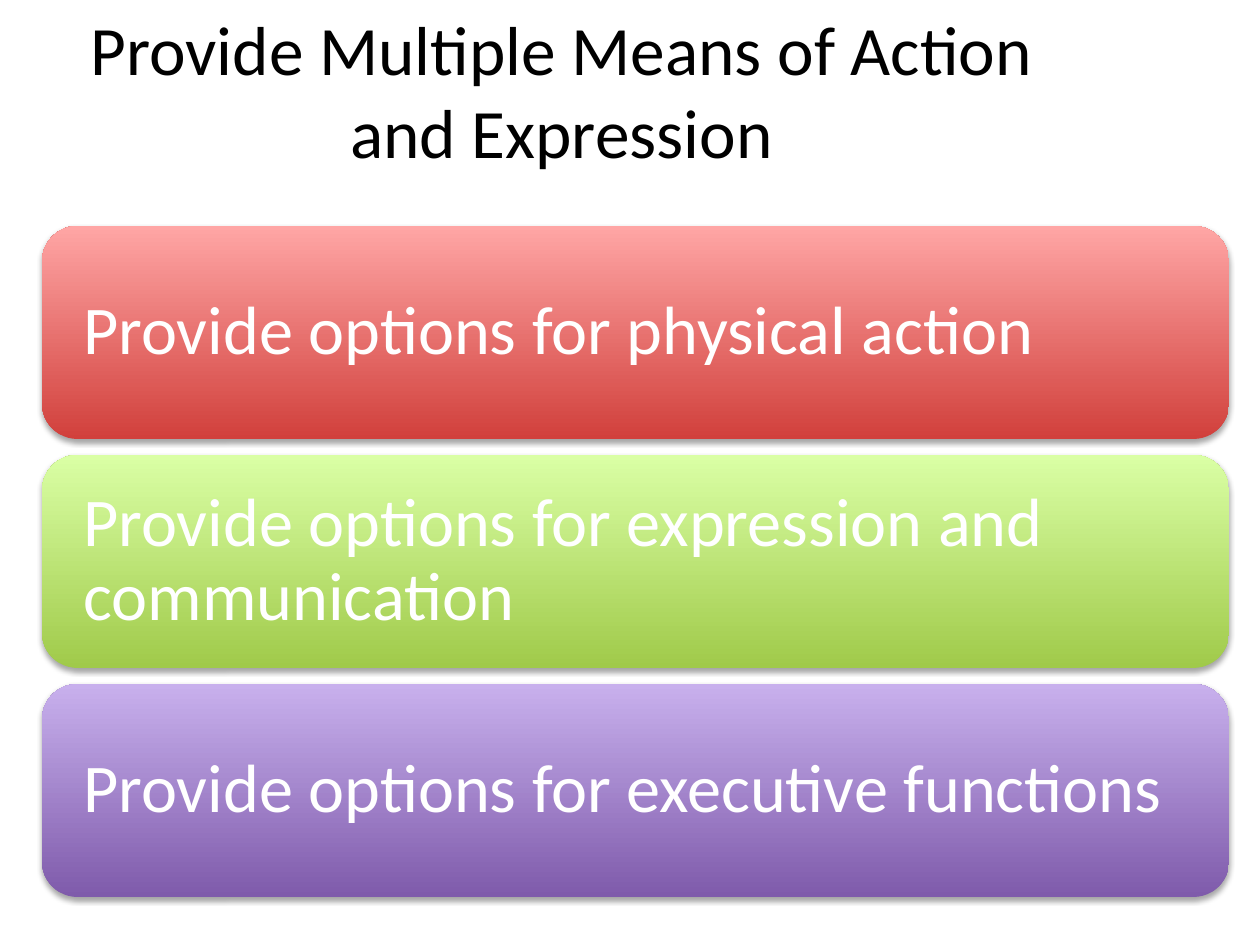
"""Build a slide with a title and three gradient bars of options for action and expression."""

from dataclasses import dataclass

import lxml.etree
import pptx
import pptx.dml.color
import pptx.enum.shapes
import pptx.enum.text
import pptx.oxml.ns
import pptx.util

EMU_PER_PX = 914400 / 126


@dataclass(frozen=True)
class Theme:
    font: str = "Calibri"
    title_size: float = 39.6
    bar_size: float = 39
    title_color: str = "000000"
    bar_text_color: str = "FFFFFF"
    shadow_color: str = "000000"


@dataclass(frozen=True)
class Box:
    left: int
    top: int
    width: int
    height: int


@dataclass(frozen=True)
class Bar:
    text: str
    bottom_color: str
    top_color: str


THEME = Theme()
TITLE = "Provide Multiple Means of Action and Expression"
TITLE_BOX = Box(21, 10, 1081, 158)
FIRST_BAR_BOX = Box(42, 226, 1187, 213)
BAR_PITCH = 229
BAR_INSET = 31
BARS = [
    Bar("Provide options for physical action", "D1403C", "FFA6A5"),
    Bar("Provide options for expression and communication", "A0CA4A", "DAFFA5"),
    Bar("Provide options for executive functions", "7F5BAB", "C8B0ED"),
]


def px(length: int) -> pptx.util.Emu:
    return pptx.util.Emu(round(length * EMU_PER_PX))


def bounds(box: Box) -> tuple:
    return px(box.left), px(box.top), px(box.width), px(box.height)


def rgb(color: str) -> pptx.dml.color.RGBColor:
    return pptx.dml.color.RGBColor.from_string(color)


def write_text(shape, text: str, size: float, color: str, alignment):
    text_frame = shape.text_frame
    text_frame.word_wrap = True
    text_frame.vertical_anchor = pptx.enum.text.MSO_ANCHOR.MIDDLE
    paragraph = text_frame.paragraphs[0]
    paragraph.text = text
    paragraph.alignment = alignment
    paragraph.font.name = THEME.font
    paragraph.font.size = pptx.util.Pt(size)
    paragraph.font.color.rgb = rgb(color)
    return paragraph


def add_shadow(shape) -> None:
    qn = pptx.oxml.ns.qn
    shape.shadow.inherit = False
    effects = shape.element.spPr.find(qn("a:effectLst"))
    shadow = lxml.etree.SubElement(
        effects, qn("a:outerShdw"),
        blurRad="40000", dist="23000", dir="5400000", rotWithShape="0",
    )
    color = lxml.etree.SubElement(shadow, qn("a:srgbClr"), val=THEME.shadow_color)
    lxml.etree.SubElement(color, qn("a:alpha"), val="35000")


def add_title(slide) -> None:
    shape = slide.shapes.add_textbox(*bounds(TITLE_BOX))
    write_text(shape, TITLE, THEME.title_size, THEME.title_color,
               pptx.enum.text.PP_ALIGN.CENTER)


def add_bar(slide, bar: Bar, box: Box) -> None:
    shape = slide.shapes.add_shape(
        pptx.enum.shapes.MSO_SHAPE.ROUNDED_RECTANGLE, *bounds(box))
    shape.fill.gradient()
    shape.fill.gradient_angle = 90
    for stop, color in zip(shape.fill.gradient_stops, (bar.bottom_color, bar.top_color)):
        stop.color.rgb = rgb(color)
    shape.line.fill.background()
    add_shadow(shape)
    shape.text_frame.margin_left = shape.text_frame.margin_right = px(BAR_INSET)
    paragraph = write_text(shape, bar.text, THEME.bar_size, THEME.bar_text_color,
                           pptx.enum.text.PP_ALIGN.LEFT)
    paragraph.line_spacing = 0.9


def main() -> None:
    presentation = pptx.Presentation()
    presentation.slide_width = px(1260)
    presentation.slide_height = px(945)
    slide = presentation.slides.add_slide(presentation.slide_layouts[6])
    add_title(slide)
    for index, bar in enumerate(BARS):
        top = FIRST_BAR_BOX.top + index * BAR_PITCH
        add_bar(slide, bar, Box(FIRST_BAR_BOX.left, top,
                                FIRST_BAR_BOX.width, FIRST_BAR_BOX.height))
    presentation.save("out.pptx")


if __name__ == "__main__":
    main()
